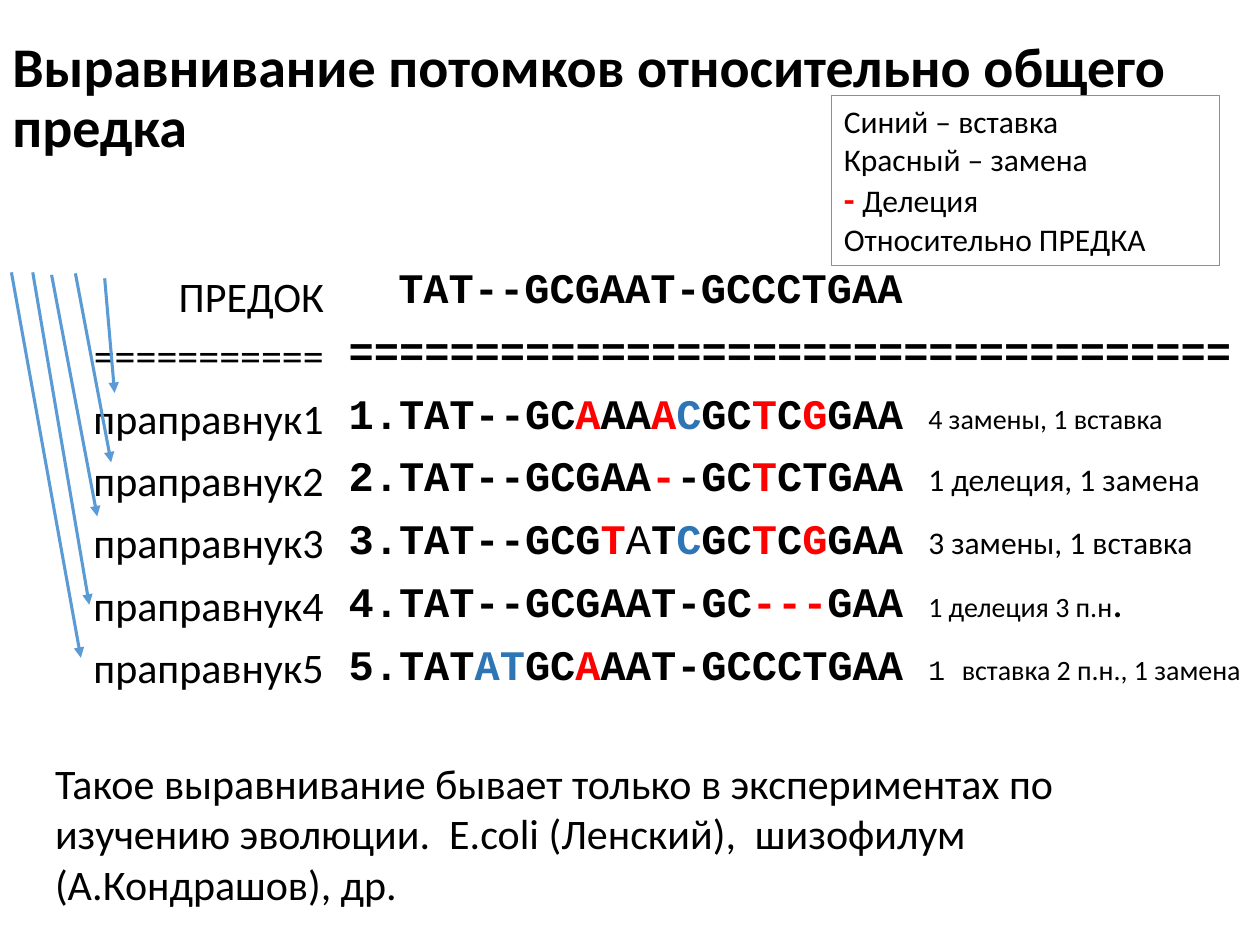
import lxml.etree
import pptx
import pptx.dml.color
import pptx.enum.shapes
import pptx.enum.text
import pptx.oxml.ns
import pptx.util

Cm = pptx.util.Cm
ALIGN = pptx.enum.text.PP_ALIGN
ANCHOR = pptx.enum.text.MSO_ANCHOR

COLORS = {
    "black": "000000",
    "red": "FF0000",
    "blue": "2E75B6",
    "line": "5B9BD5",
}
STYLES = {
    "title": ("Calibri", 32, True, "black"),
    "text": ("Calibri", 24, False, "black"),
    "legend": ("Calibri", 18, False, "black"),
    "dash": ("Calibri", 20, True, "red"),
    "same": ("Courier New", 24, True, "black"),
    "light": ("Courier New", 24, False, "black"),
    "changed": ("Courier New", 24, True, "red"),
    "inserted": ("Courier New", 24, True, "blue"),
    "small": ("Calibri", 16, False, "black"),
    "small mono": ("Courier New", 16, False, "black"),
}

TITLE = [[("Выравнивание потомков относительно общего предка", "title")]]
LEGEND = [
    [("Синий – вставка", "legend")],
    [("Красный – замена", "legend")],
    [("- ", "dash"), ("Делеция", "legend")],
    [("Относительно ПРЕДКА", "legend")],
]
ANCESTOR = [("TAT--GCGAAT-GCCCTGAA", "same")]
RULE = [("=" * 35, "same")]
DESCENDANTS = [
    [("TAT--GC", "same"), ("A", "changed"), ("AA", "same"), ("A", "changed"),
     ("C", "inserted"), ("GC", "same"), ("T", "changed"), ("C", "same"),
     ("G", "changed"), ("GAA ", "same"), ("4 замены, 1 вставка", "small")],
    [("TAT--GCGAA", "same"), ("-", "changed"), ("-GC", "same"), ("T", "changed"),
     ("CTGAA ", "same"), ("1 делеция, 1 замена", "legend")],
    [("TAT--GCG", "same"), ("T", "changed"), ("A", "light"), ("T", "same"),
     ("C", "inserted"), ("GC", "same"), ("T", "changed"), ("C", "same"),
     ("G", "changed"), ("GAA ", "same"), ("3 замены, 1 вставка", "legend")],
    [("TAT--GCGAAT-GC", "same"), ("---", "changed"), ("GAA ", "same"),
     ("1 делеция 3 п.н", "small"), (".", "text")],
    [("TAT", "same"), ("AT", "inserted"), ("GC", "same"), ("A", "changed"),
     ("AAT-GCCCTGAA ", "same"), ("1 ", "small mono"),
     ("вставка 2 п.н., 1 замена", "small")],
]
HEADINGS = ["ПРЕДОК", "=" * 11]
NAMES = [f"праправнук{number}" for number in range(1, len(DESCENDANTS) + 1)]
NOTE = [[("Такое выравнивание бывает только в экспериментах по изучению эволюции.  "
          "E.coli (Ленский),  шизофилум (А.Кондрашов), др.", "text")]]
ARROWS = [
    (0.23, 5.49, 1.63, 13.26),
    (2.11, 5.61, 2.31, 7.92),
    (1.52, 5.51, 2.24, 9.32),
    (0.66, 5.49, 1.8, 12.19),
    (1.04, 5.54, 1.96, 10.41),
]
INDENT = Cm(1)


def color(name):
    return pptx.dml.color.RGBColor.from_string(COLORS[name])


def add_xml(parent, tag, **attributes):
    return lxml.etree.SubElement(parent, pptx.oxml.ns.qn(tag), attributes)


def write(shape, lines, wrap=True, anchor=ANCHOR.TOP, align=ALIGN.LEFT):
    frame = shape.text_frame
    frame.word_wrap = wrap
    frame.vertical_anchor = anchor
    for index, line in enumerate(lines):
        para = frame.add_paragraph() if index else frame.paragraphs[0]
        para.alignment = align
        for text, style in line:
            font_name, size, bold, color_name = STYLES[style]
            span = para.add_run()
            span.text = text
            span.font.name = font_name
            span.font.size = pptx.util.Pt(size)
            span.font.bold = bold
            span.font.color.rgb = color(color_name)
    return frame.paragraphs


def add_text(page, place, lines, **options):
    box = page.shapes.add_textbox(*map(Cm, place))
    return write(box, lines, **options)


def add_alignment(page):
    paras = add_text(page, (6.78, 5.26, 18.62, 9.07), [ANCESTOR, RULE, *DESCENDANTS])
    for para in paras:
        para.line_spacing = 0.9
        para.space_before = pptx.util.Pt(10)
    paras[0]._p.get_or_add_pPr().set("marL", str(INDENT))
    for para in paras[2:]:
        properties = para._p.get_or_add_pPr()
        properties.set("marL", str(INDENT))
        properties.set("indent", str(-INDENT))
        add_xml(properties, "a:buFont", typeface="+mj-lt")
        add_xml(properties, "a:buAutoNum", type="arabicPeriod")


def add_names(page):
    lines = [[(name, "text")] for name in HEADINGS + NAMES]
    paras = add_text(page, (1.57, 5.16, 5.21, 9.02), lines, wrap=False, align=ALIGN.RIGHT)
    for index, para in enumerate(paras):
        para.line_spacing = 1.17 if index < len(HEADINGS) else 1.24


def add_arrow(page, ends):
    arrow = page.shapes.add_connector(
        pptx.enum.shapes.MSO_CONNECTOR.STRAIGHT, *map(Cm, ends))
    arrow.line.color.rgb = color("line")
    arrow.line.width = pptx.util.Pt(1.75)
    add_xml(arrow.line._get_or_add_ln(), "a:tailEnd", type="triangle")
    add_xml(arrow._element.spPr, "a:effectLst")


def add_legend(page):
    legend = page.shapes.add_shape(
        pptx.enum.shapes.MSO_SHAPE.RECTANGLE, *map(Cm, (16.76, 1.93, 7.82, 3.43)))
    legend.shadow.inherit = False
    legend.fill.background()
    legend.line.color.rgb = color("line")
    legend.line.width = pptx.util.Pt(0.75)
    write(legend, LEGEND)


def main():
    deck = pptx.Presentation()
    deck.slide_width, deck.slide_height = Cm(25.4), Cm(19.05)
    page = deck.slides.add_slide(deck.slide_layouts[6])
    title = add_text(page, (0, 0.36, 25.17, 3.28), TITLE, anchor=ANCHOR.MIDDLE)
    title[0].line_spacing = 0.9
    add_alignment(page)
    add_names(page)
    add_text(page, (0.86, 15.14, 23.44, 3.33), NOTE)
    for ends in ARROWS:
        add_arrow(page, ends)
    add_legend(page)
    deck.save("out.pptx")


if __name__ == "__main__":
    main()
